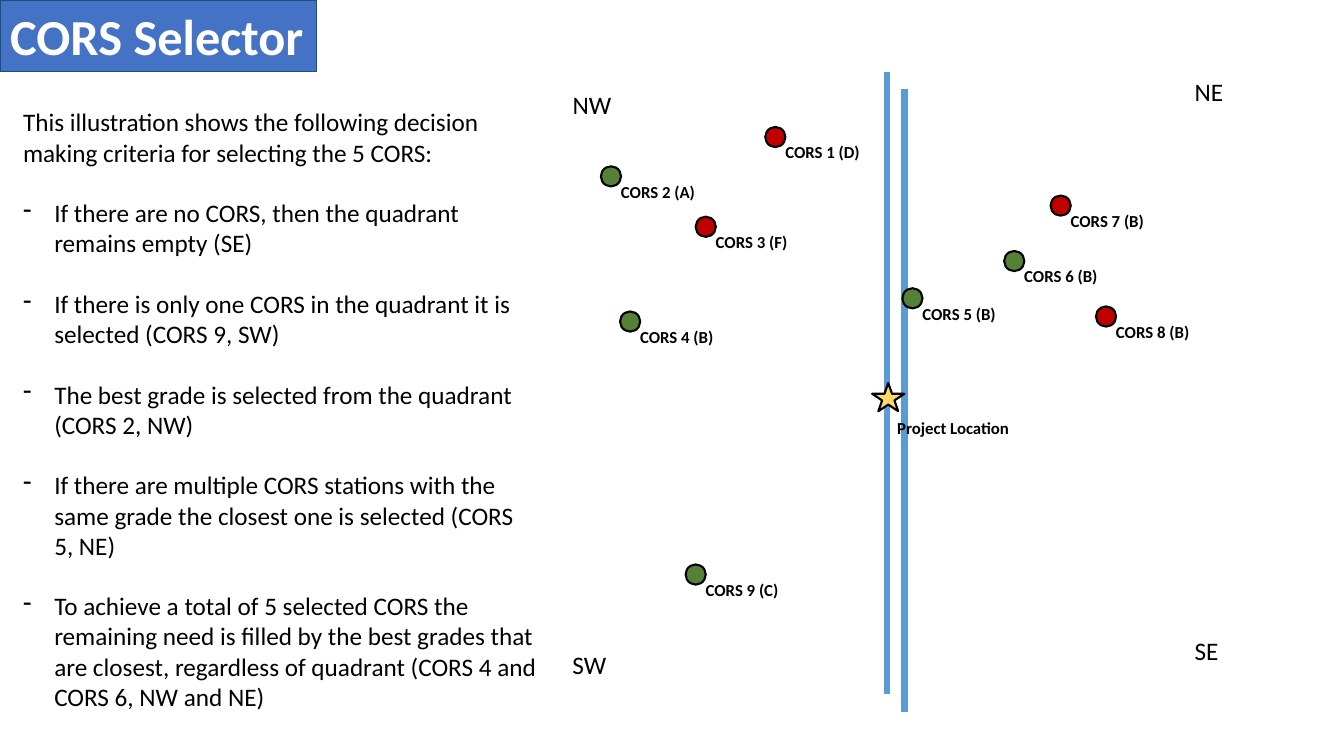
from lxml.etree import SubElement
from pptx import Presentation
from pptx.dml.color import RGBColor
from pptx.enum.shapes import MSO_CONNECTOR, MSO_SHAPE
from pptx.enum.text import MSO_ANCHOR, MSO_AUTO_SIZE, PP_ALIGN
from pptx.oxml.ns import qn
from pptx.util import Pt

PX = 9144  # EMU per px, 100 px to the inch
COLORS = {
    "axis": "5B9BD5",
    "selected": "548135",
    "rejected": "C00000",
    "star": "FFD966",
    "title_fill": "4472C4",
    "title_line": "1E4E79",
    "white": "FFFFFF",
    "black": "000000",
}
COLORS = {name: RGBColor.from_string(value) for name, value in COLORS.items()}


def add_label(shapes, text, left, top, width, height, size, bold=False):
    box = shapes.add_textbox(left * PX, top * PX, width * PX, height * PX)
    box.text_frame.word_wrap = True
    box.text_frame.text = text
    for paragraph in box.text_frame.paragraphs:
        font = paragraph.runs[0].font
        font.name, font.size, font.bold = "Calibri", Pt(size), bold
        font.color.rgb = COLORS["black"]
    return box


def add_marker(shapes, preset, left, top, width, height, fill):
    marker = shapes.add_shape(preset, left * PX, top * PX, width * PX, height * PX)
    marker.shadow.inherit = False
    marker.fill.solid()
    marker.fill.fore_color.rgb = COLORS[fill]
    marker.line.color.rgb = COLORS["black"]
    marker.line.width = Pt(1.5)


presentation = Presentation()
presentation.slide_width, presentation.slide_height = 1333 * PX, 750 * PX
slide = presentation.slides.add_slide(presentation.slide_layouts[5])

# Title
title = slide.shapes.title
title.left, title.top, title.width, title.height = 0, 0, 314 * PX, 71 * PX
title.fill.solid()
title.fill.fore_color.rgb = COLORS["title_fill"]
title.line.color.rgb = COLORS["title_line"]
title.line.width = Pt(0.75)
title.text_frame.text = "CORS Selector"
title.text_frame.auto_size = MSO_AUTO_SIZE.NONE
title.text_frame.vertical_anchor = MSO_ANCHOR.MIDDLE
title_paragraph = title.text_frame.paragraphs[0]
title_paragraph.alignment = PP_ALIGN.LEFT
title_font = title_paragraph.runs[0].font
title_font.name, title_font.size, title_font.bold = "Calibri", Pt(36), True
title_font.color.rgb = COLORS["white"]

# Quadrant lines
for x, top, bottom in [(880, 71, 689), (897, 88, 706)]:
    axis = slide.shapes.add_connector(
        MSO_CONNECTOR.STRAIGHT, x * PX, top * PX, x * PX, bottom * PX)
    axis.line.color.rgb = COLORS["axis"]
    axis.line.width = Pt(4.5)
    SubElement(axis._element.spPr, qn("a:effectLst"))

# Quadrant names
for name, left, top, width in [
    ("NW", 558, 84, 59),
    ("NE", 1175, 71, 49),
    ("SW", 558, 639, 54),
    ("SE", 1175, 625, 44),
]:
    add_label(slide.shapes, name, left, top, width, 40, 18)

# Project location
add_marker(slide.shapes, MSO_SHAPE.STAR_5_POINT, 865, 380, 32, 28, "star")
add_label(slide.shapes, "Project Location", 880, 410, 133, 30, 12, bold=True)

# Stations: each label starts at the centre of its marker
MARKER = 20
for name, left, top, status in [
    ("CORS 1 (D)", 759, 126, "rejected"),
    ("CORS 2 (A)", 596, 165, "selected"),
    ("CORS 3 (F)", 690, 215, "rejected"),
    ("CORS 4 (B)", 615, 309, "selected"),
    ("CORS 5 (B)", 895, 286, "selected"),
    ("CORS 6 (B)", 996, 249, "selected"),
    ("CORS 7 (B)", 1042, 194, "rejected"),
    ("CORS 8 (B)", 1087, 304, "rejected"),
    ("CORS 9 (C)", 680, 560, "selected"),
]:
    station = slide.shapes.add_group_shape()
    add_marker(station.shapes, MSO_SHAPE.OVAL, left, top, MARKER, MARKER, status)
    add_label(station.shapes, name, left + MARKER // 2, top + MARKER // 2,
              122, 30, 12, bold=True)

# Decision criteria
criteria = [
    "This illustration shows the following decision making criteria for selecting the 5 CORS:",
    "If there are no CORS, then the quadrant remains empty (SE)",
    "If there is only one CORS in the quadrant it is selected (CORS 9, SW)",
    "The best grade is selected from the quadrant (CORS 2, NW)",
    "If there are multiple CORS stations with the same grade the closest one is selected (CORS 5, NE)",
    "To achieve a total of 5 selected CORS the remaining need is filled by the best grades "
    "that are closest, regardless of quadrant (CORS 4 and CORS 6, NW and NE)",
]
criteria_box = add_label(slide.shapes, "\n".join(criteria), 13, 101, 529, 647, 18)
for paragraph in criteria_box.text_frame.paragraphs[1:]:
    paragraph.space_before = Pt(21.6)
    properties = paragraph._p.get_or_add_pPr()
    properties.set("marL", str(31 * PX))
    properties.set("indent", str(-31 * PX))
    SubElement(properties, qn("a:buChar"), char="-")

presentation.save("out.pptx")
